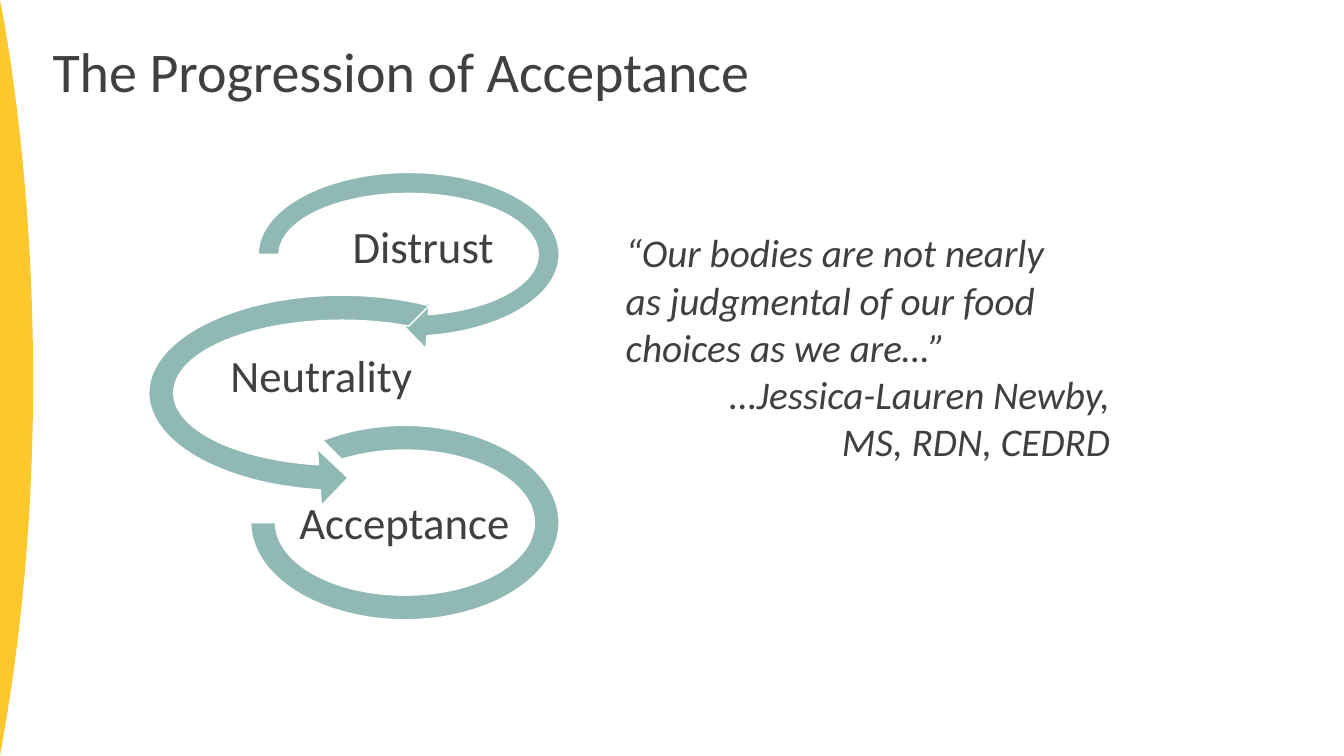
from dataclasses import dataclass

from pptx import Presentation
from pptx.dml.color import RGBColor
from pptx.enum.shapes import MSO_SHAPE as Preset
from pptx.enum.text import MSO_ANCHOR as Anchor, MSO_AUTO_SIZE as AutoSize, PP_ALIGN as Align
from pptx.shapes.autoshape import Shape
from pptx.slide import Slide
from pptx.text.text import TextFrame, _Paragraph as Paragraph
from pptx.util import Cm, Length, Pt


@dataclass(frozen=True)
class Theme:
    font: str = "Calibri"
    ink: RGBColor = RGBColor(0x40, 0x40, 0x40)
    edge: RGBColor = RGBColor(0xFE, 0xC7, 0x2B)
    ring: RGBColor = RGBColor(0x90, 0xB9, 0xB5)
    outline: RGBColor = RGBColor(0xFF, 0xFF, 0xFF)
    title_size: Length = Pt(40)
    stage_size: Length = Pt(32)
    quote_size: Length = Pt(28)


@dataclass(frozen=True)
class Box:
    """A rectangle in centimetres."""
    left: float
    top: float
    width: float
    height: float

    def lengths(self) -> tuple[Length, ...]:
        return tuple(Cm(v) for v in (self.left, self.top, self.width, self.height))


@dataclass(frozen=True)
class Stage:
    name: str
    preset: Preset
    ring: Box
    adjustments: tuple[float, ...]
    label: Box


THEME = Theme()
SLIDE_WIDTH, SLIDE_HEIGHT = 33.87, 19.05
EDGE_PULL = (1.88, 8.86)
EDGE_STEPS = 60
TITLE_BOX = Box(1.07, 0.99, 26.85, 2.49)
QUOTE_BOX = Box(15.52, 5.64, 12.7, 6.25)

STAGES = (
    Stage("Distrust", Preset.CIRCULAR_ARROW, Box(6.17, 4.01, 8.26, 4.8),
          (0.11, 11.42, 45, 108, 0.125), Box(8.2, 5.26, 4.93, 2.03)),
    Stage("Neutrality", Preset.LEFT_CIRCULAR_ARROW, Box(3.35, 7.04, 10.54, 5.72),
          (0.11, 11.42, 63, 189, 0.125), Box(4.11, 8.74, 7.98, 1.57)),
    Stage("Acceptance", Preset.BLOCK_ARC, Box(6.32, 10.72, 7.77, 4.9),
          (135, 108, 0.127), Box(6.93, 12.45, 6.53, 1.57)),
)

QUOTE = (
    ("“Our bodies are not nearly\vas judgmental of our food choices as we are…”", Align.LEFT),
    ("…Jessica-Lauren Newby,", Align.RIGHT),
    ("MS, RDN, CEDRD", Align.RIGHT),
)


def apply(target: object, formats: dict[str, object]) -> None:
    for attribute, value in formats.items():
        setattr(target, attribute, value)


def write(paragraph: Paragraph, text: str, size: Length, align: Align,
          spacing: float = 1.0, italic: bool = False) -> None:
    paragraph.text = text
    apply(paragraph, {"alignment": align, "line_spacing": spacing})
    for run in paragraph.runs:
        apply(run.font, {"name": THEME.font, "size": size, "italic": italic})
        run.font.color.rgb = THEME.ink


def paint(shape: Shape, color: RGBColor) -> None:
    shape.shadow.inherit = False
    shape.fill.solid()
    shape.fill.fore_color.rgb = color


def add_text_frame(slide: Slide, box: Box, formats: dict[str, object]) -> TextFrame:
    frame = slide.shapes.add_textbox(*box.lengths()).text_frame
    apply(frame, {"word_wrap": True, **formats})
    return frame


def add_edge(slide: Slide) -> None:
    """Draw the bulging left edge as a finely stepped cubic curve."""
    pull_x, pull_y = EDGE_PULL
    points = []
    for step in range(1, EDGE_STEPS + 1):
        t = step / EDGE_STEPS
        pull = 3 * (1 - t) ** 2 * t
        points.append((Cm(pull * pull_x), Cm((1 - t) ** 3 * SLIDE_HEIGHT + pull * pull_y)))
    builder = slide.shapes.build_freeform(0, Cm(SLIDE_HEIGHT))
    builder.add_line_segments(points, close=True)
    edge = builder.convert_to_shape()
    paint(edge, THEME.edge)
    edge.line.fill.background()


def add_title(slide: Slide) -> None:
    title = slide.shapes.title
    apply(title, dict(zip(("left", "top", "width", "height"), TITLE_BOX.lengths())))
    apply(title.text_frame, {"vertical_anchor": Anchor.TOP, "auto_size": AutoSize.NONE})
    write(title.text_frame.paragraphs[0], "The Progression of Acceptance",
          THEME.title_size, Align.LEFT, spacing=0.9)


def add_stage(slide: Slide, stage: Stage) -> None:
    ring = slide.shapes.add_shape(stage.preset, *stage.ring.lengths())
    for index, value in enumerate(stage.adjustments):
        ring.adjustments[index] = value
    paint(ring, THEME.ring)
    ring.line.color.rgb = THEME.outline
    ring.line.width = Pt(1)

    margins = ("margin_left", "margin_top", "margin_right", "margin_bottom")
    label = add_text_frame(slide, stage.label, {
        "vertical_anchor": Anchor.MIDDLE, **dict.fromkeys(margins, Cm(0.05))})
    write(label.paragraphs[0], stage.name, THEME.stage_size, Align.CENTER, spacing=0.9)


def add_quote(slide: Slide) -> None:
    frame = add_text_frame(slide, QUOTE_BOX, {"auto_size": AutoSize.SHAPE_TO_FIT_TEXT})
    for index, (text, align) in enumerate(QUOTE):
        paragraph = frame.add_paragraph() if index else frame.paragraphs[0]
        write(paragraph, text, THEME.quote_size, align, italic=True)


def main() -> None:
    deck = Presentation()
    apply(deck, {"slide_width": Cm(SLIDE_WIDTH), "slide_height": Cm(SLIDE_HEIGHT)})
    slide = deck.slides.add_slide(deck.slide_layouts.get_by_name("Title Only"))
    add_edge(slide)
    add_title(slide)
    for stage in STAGES:
        add_stage(slide, stage)
    add_quote(slide)
    deck.save("out.pptx")


if __name__ == "__main__":
    main()
